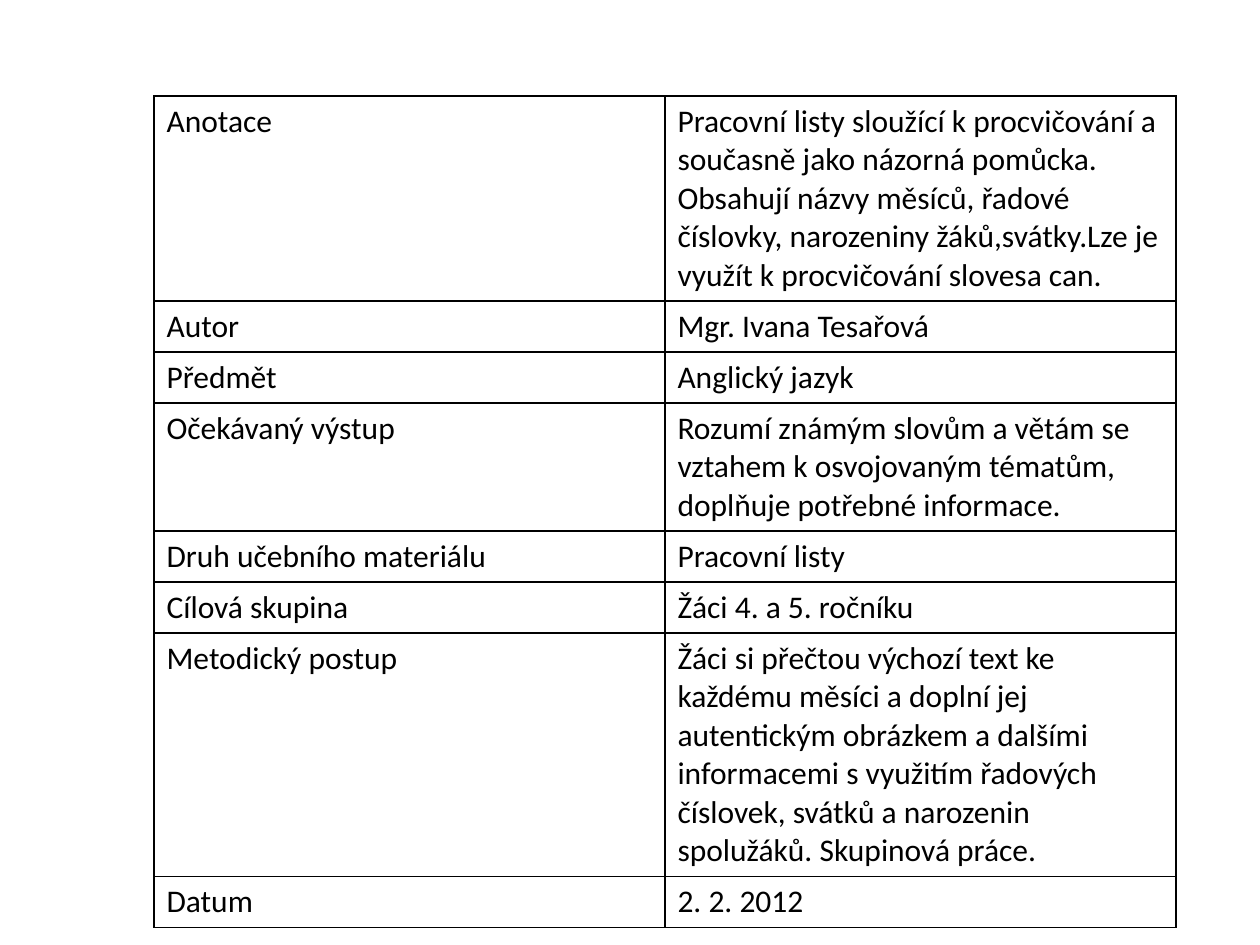
import pptx
import pptx.dml.color
import pptx.oxml
import pptx.oxml.ns
import pptx.util

# Content: label, text, lines the text takes
ROWS = [
    ("Anotace",
     "Pracovní listy sloužící k procvičování a současně jako názorná pomůcka. "
     "Obsahují názvy měsíců, řadové číslovky, narozeniny žáků,svátky.Lze je "
     "využít k procvičování slovesa can.", 5),
    ("Autor", "Mgr. Ivana Tesařová", 1),
    ("Předmět", "Anglický jazyk", 1),
    ("Očekávaný výstup",
     "Rozumí známým slovům a větám se vztahem k osvojovaným tématům, "
     "doplňuje potřebné informace.", 3),
    ("Druh učebního materiálu", "Pracovní listy", 1),
    ("Cílová skupina", "Žáci 4. a 5. ročníku", 1),
    ("Metodický postup",
     "Žáci si přečtou výchozí text ke každému měsíci a doplní jej autentickým "
     "obrázkem a dalšími informacemi s využitím řadových číslovek, svátků a "
     "narozenin spolužáků. Skupinová práce.", 6),
    ("Datum", "2. 2. 2012", 1),
]
COLORS = {"text": "000000", "border": "000000"}
FONT, FONT_SIZE, BORDER_WIDTH = "Calibri", 18, 1

# Layout in px
PX = 914400 // 126
SLIDE_WIDTH, SLIDE_HEIGHT = 1260, 945
LEFT, TOP, COLUMN_WIDTH = 154, 96, 511
TWO_LINES, CELL_PADDING = 77, 12


def px(length):
    return pptx.util.Emu(length * PX)


def row_height(lines):
    return lines * TWO_LINES // 2 + CELL_PADDING


def add_borders(cell):
    properties = cell._tc.get_or_add_tcPr()
    for index, side in enumerate(("lnL", "lnR", "lnT", "lnB")):
        properties.insert(index, pptx.oxml.parse_xml(
            f'<a:{side} {pptx.oxml.ns.nsdecls("a")} w="{pptx.util.Pt(BORDER_WIDTH)}">'
            f'<a:solidFill><a:srgbClr val="{COLORS["border"]}"/></a:solidFill>'
            f'</a:{side}>'))


def fill_cell(cell, text):
    cell.text = text
    font = cell.text_frame.paragraphs[0].runs[0].font
    font.name, font.size, font.bold = FONT, pptx.util.Pt(FONT_SIZE), False
    font.color.rgb = pptx.dml.color.RGBColor.from_string(COLORS["text"])
    cell.fill.background()
    add_borders(cell)


deck = pptx.Presentation()
deck.slide_width, deck.slide_height = px(SLIDE_WIDTH), px(SLIDE_HEIGHT)
page = deck.slides.add_slide(deck.slide_layouts[6])

# Table of facts about the worksheet
heights = [row_height(lines) for _, _, lines in ROWS]
table = page.shapes.add_table(len(ROWS), 2, px(LEFT), px(TOP),
                              px(2 * COLUMN_WIDTH), px(sum(heights))).table
table.first_row = table.horz_banding = False
for column in table.columns:
    column.width = px(COLUMN_WIDTH)
for row, height, (label, text, _) in zip(table.rows, heights, ROWS):
    row.height = px(height)
    fill_cell(row.cells[0], label)
    fill_cell(row.cells[1], text)

deck.save("out.pptx")
